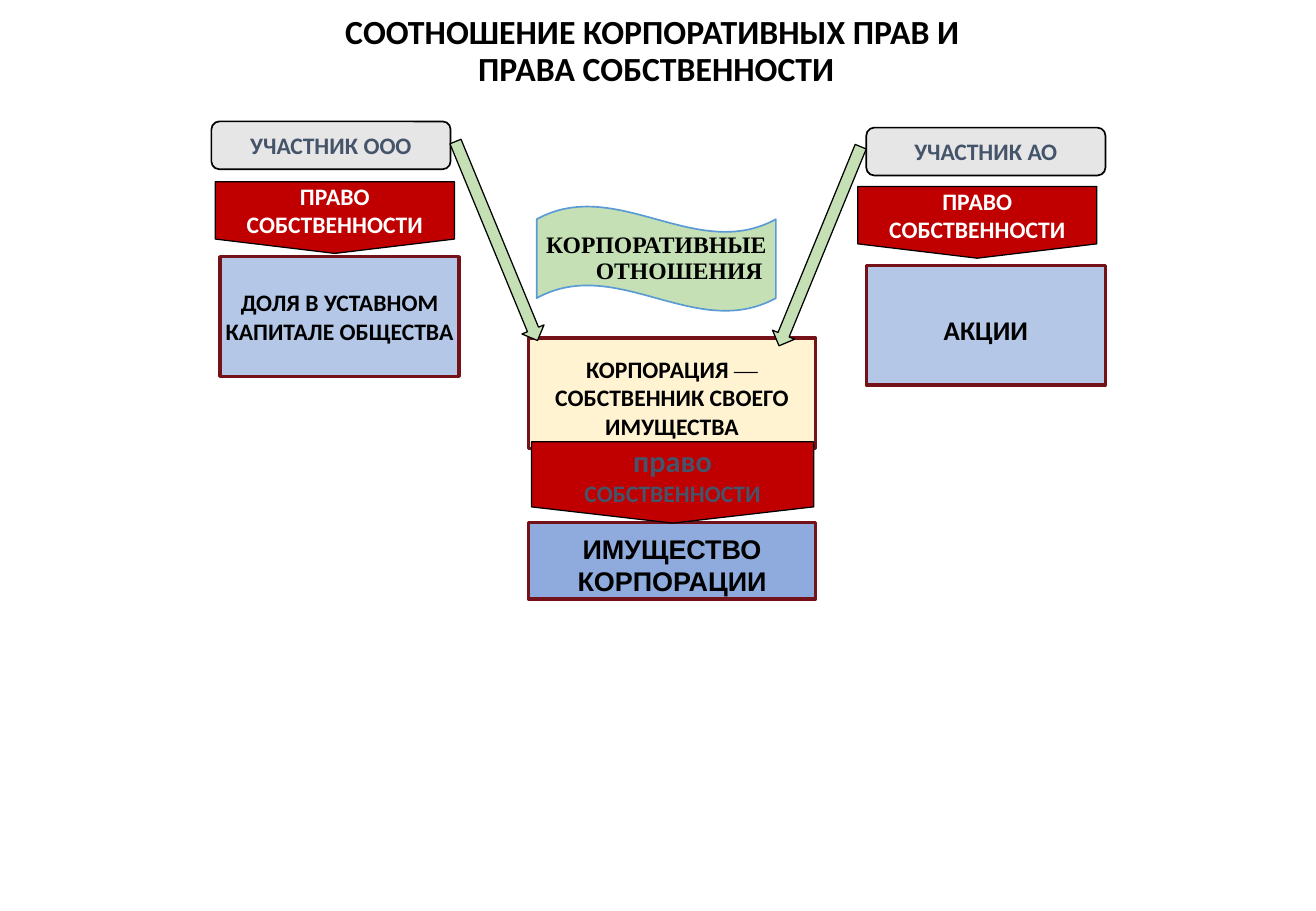
from pptx import Presentation
from pptx.dml.color import RGBColor
from pptx.enum.shapes import MSO_SHAPE as Shape
from pptx.enum.text import MSO_ANCHOR as Anchor, PP_ALIGN as Align
from pptx.util import Cm, Pt

BLACK = RGBColor(0x00, 0x00, 0x00)
WHITE = RGBColor(0xFF, 0xFF, 0xFF)
SLATE = RGBColor(0x44, 0x54, 0x6A)
GRAY = RGBColor(0xE7, 0xE6, 0xE6)
RED = RGBColor(0xC0, 0x00, 0x00)
MAROON = RGBColor(0x75, 0x12, 0x19)
CREAM = RGBColor(0xFF, 0xF3, 0xD2)
PALE_BLUE = RGBColor(0xB4, 0xC7, 0xE7)
MID_BLUE = RGBColor(0x8F, 0xAA, 0xDC)
GREEN = RGBColor(0xC5, 0xE0, 0xB4)
SKY = RGBColor(0x5B, 0x9B, 0xD5)

# Preset, line colour, line width in points, margins in cm: left, top, right, bottom
KINDS = {
    "member": (Shape.ROUNDED_RECTANGLE, BLACK, 1, (0.25, 0.13, 0.25, 0.13)),
    "right": (Shape.FLOWCHART_OFFPAGE_CONNECTOR, BLACK, 0.75, (0.15, 0.03, 0.15, 0.03)),
    "asset": (Shape.RECTANGLE, MAROON, 2, (0.05, 0.13, 0.05, 0.13)),
    "low asset": (Shape.RECTANGLE, MAROON, 2, (0.05, 0.17, 0.05, 0)),
    "arrow": (Shape.DOWN_ARROW, BLACK, 0.75, (0, 0, 0, 0)),
    "wave": (Shape.WAVE, SKY, 1, (0.15, 0.03, 0.15, 0.03)),
}


def write(box, margins, paragraphs, line_spacing=None):
    """Fill a box with paragraphs, each a list of (text, font format) runs; a lone newline breaks the line."""
    frame = box.text_frame
    layout = dict(zip(("margin_left", "margin_top", "margin_right", "margin_bottom"), map(Cm, margins)))
    layout.update(word_wrap=True, vertical_anchor=Anchor.MIDDLE)
    for name, value in layout.items():
        setattr(frame, name, value)
    for index, spans in enumerate(paragraphs):
        para = frame.add_paragraph() if index else frame.paragraphs[0]
        para.alignment = Align.CENTER
        para.line_spacing = line_spacing
        for text, changes in spans:
            if text == "\n":
                para.add_line_break()
                continue
            span = para.add_run()
            span.text = text
            font = {"name": "Calibri", "size": 14, "bold": True, "color": BLACK} | changes
            span.font.color.rgb = font.pop("color")
            font["size"] = Pt(font["size"])
            for name, value in font.items():
                setattr(span.font, name, value)


def draw(page, kind, left, top, width, height, fill):
    preset, line_color, line_width, _ = KINDS[kind]
    box = page.shapes.add_shape(preset, Cm(left), Cm(top), Cm(width), Cm(height))
    box.shadow.inherit = False
    box.fill.solid()
    box.fill.fore_color.rgb = fill
    box.line.color.rgb = line_color
    box.line.width = Pt(line_width)
    return box


deck = Presentation()
deck.slide_width, deck.slide_height = Cm(27.51), Cm(19.05)
page = deck.slides.add_slide(deck.slide_layouts[6])

title = page.shapes.add_textbox(Cm(1.02), Cm(-0.36), Cm(25.4), Cm(2.9))
write(title, (0.25, 0.13, 0.25, 0.13),
      [[("СООТНОШЕНИЕ КОРПОРАТИВНЫХ ПРАВ И ", {"size": 20}), ("\n", {}),
        ("ПРАВА СОБСТВЕННОСТИ", {"size": 20})]], 0.9)

ownership = [[("ПРАВО", {"color": WHITE})], [("СОБСТВЕННОСТИ", {"color": WHITE})]]
corporate_ownership = [[("право", {"size": 18, "color": SLATE})],
                       [("СОБСТВЕННОСТИ", {"color": SLATE})]]
corporation = [[("КОРПОРАЦИЯ ", {}), ("—", {"name": "Times New Roman", "bold": False}),
                (" СОБСТВЕННИК СВОЕГО ИМУЩЕСТВА", {})]]

boxes = [
    ("low asset", 11.05, 10.93, 6, 1.6, MID_BLUE,
     [[("ИМУЩЕСТВО КОРПОРАЦИИ", {"name": "Arial", "size": 16})]]),
    ("low asset", 11.05, 7.07, 6, 2.31, CREAM, corporation),
    ("right", 11.11, 9.24, 5.9, 1.7, RED, corporate_ownership),
    ("member", 4.42, 2.54, 5, 1, GRAY, [[("УЧАСТНИК ООО", {"color": SLATE})]]),
    ("right", 4.5, 3.8, 5, 1.5, RED, ownership),
    ("asset", 4.6, 5.37, 5, 2.5, PALE_BLUE, [[("ДОЛЯ В УСТАВНОМ КАПИТАЛЕ ОБЩЕСТВА", {})]]),
    ("member", 18.11, 2.67, 5, 1, GRAY, [[("УЧАСТНИК АО", {"color": SLATE})]]),
    ("right", 17.93, 3.9, 5, 1.5, RED, ownership),
    ("low asset", 18.11, 5.55, 5, 2.5, PALE_BLUE, [[("АКЦИИ", {"size": 16})]]),
]
for kind, left, top, width, height, fill, paragraphs in boxes:
    box = draw(page, kind, left, top, width, height, fill)
    write(box, KINDS[kind][3], paragraphs)

for left, top, angle in ((10.13, 2.79, -22.4), (16.89, 2.9, 22.3)):
    arrow = draw(page, "arrow", left, top, 0.5, 4.5, GREEN)
    arrow.rotation = angle

relations = draw(page, "wave", 11.22, 4.31, 5, 2.2, GREEN)
write(relations, KINDS["wave"][3],
      [[("КОРПОРАТИВНЫЕ ОТНОШЕНИЯ", {"name": "Times New Roman"})]], 0.9)
hanging = relations.text_frame.paragraphs[0]._p.get_or_add_pPr()
hanging.set("marL", str(Cm(0.96)))
hanging.set("indent", str(-Cm(0.96)))

deck.save("out.pptx")
